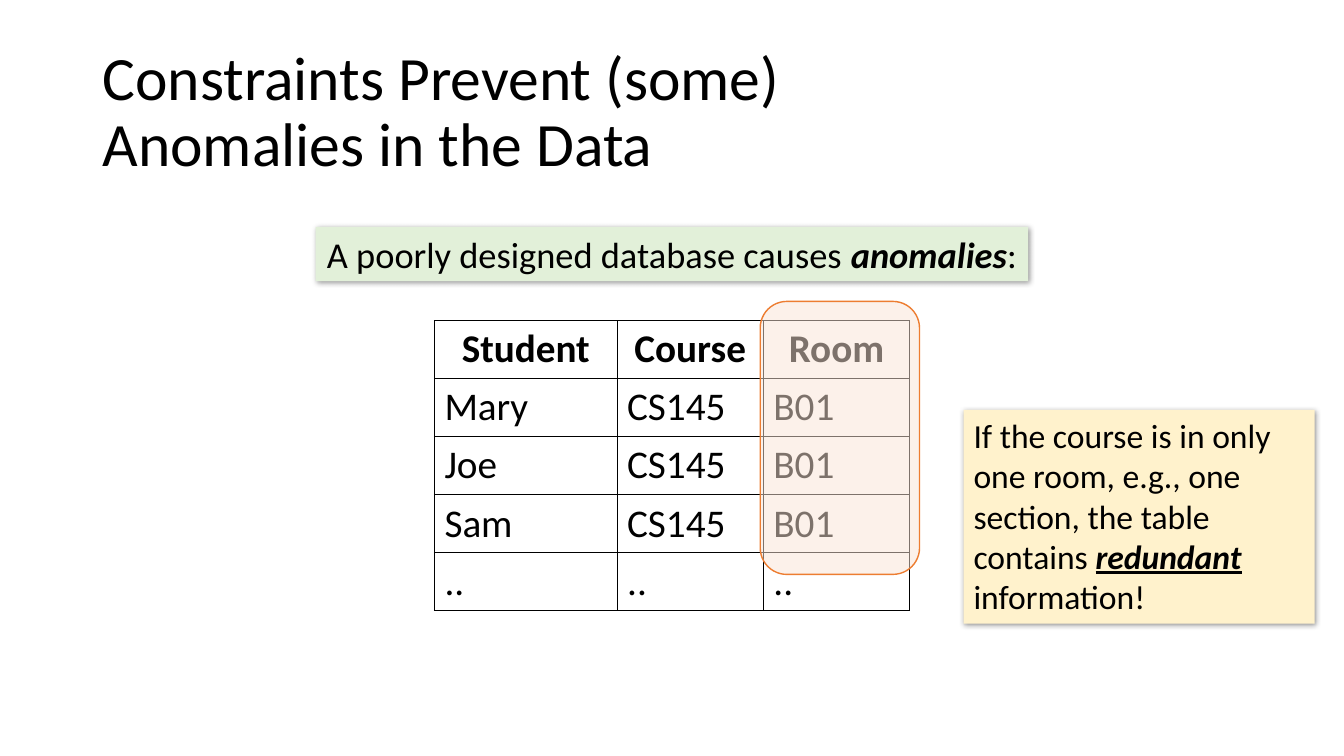
from dataclasses import dataclass

from lxml import etree
from pptx import Presentation
from pptx.dml.color import RGBColor
from pptx.enum.shapes import MSO_SHAPE as SHAPE
from pptx.enum.text import MSO_ANCHOR as ANCHOR, MSO_AUTO_SIZE as AUTO, PP_ALIGN as ALIGN
from pptx.oxml import parse_xml
from pptx.oxml.ns import nsdecls, qn
from pptx.util import Pt


@dataclass(frozen=True)
class Theme:
    font: str = "Calibri"
    ink: str = "000000"
    green: str = "E2F0D9"
    yellow: str = "FFF2CC"
    peach: str = "FBE5D6"
    orange: str = "ED7D31"
    title: int = 44
    table: int = 28
    banner: int = 26
    note: int = 24


THEME = Theme()
ROWS = [
    ("Student", "Course", "Room"),
    ("Mary", "CS145", "B01"),
    ("Joe", "CS145", "B01"),
    ("Sam", "CS145", "B01"),
    ("..", "..", ".."),
]


def rgb(color):
    return RGBColor.from_string(color)


def place(shape, box):
    shape.left, shape.top, shape.width, shape.height = (Pt(v) for v in box)


def style(r, size, bold=False, italic=False, underline=False):
    f = r.font
    f.name, f.size, f.color.rgb = THEME.font, Pt(size), rgb(THEME.ink)
    f.bold, f.italic, f.underline = bold, italic, underline


def add_title(s, box, text):
    title = s.shapes.title
    place(title, box)
    tf = title.text_frame
    tf.text = text
    tf.auto_size, tf.vertical_anchor = AUTO.NONE, ANCHOR.MIDDLE
    p = tf.paragraphs[0]
    p.alignment, p.line_spacing = ALIGN.LEFT, 0.9
    for r in p.runs:
        style(r, THEME.title)


def add_borders(cell):
    tcPr = cell._tc.get_or_add_tcPr()
    for side in ("lnL", "lnR", "lnT", "lnB"):
        tcPr.append(parse_xml(
            f'<a:{side} {nsdecls("a")} w="{Pt(1)}"><a:solidFill>'
            f'<a:srgbClr val="{THEME.ink}"/></a:solidFill></a:{side}>'))


def add_grid(s, box, widths, rows):
    table = s.shapes.add_table(len(rows), len(widths), *(Pt(v) for v in box)).table
    table.first_row = table.horz_banding = False
    for col, width in zip(table.columns, widths):
        col.width = Pt(width)
    for i, values in enumerate(rows):
        table.rows[i].height = Pt(box[3] / len(rows))
        for j, value in enumerate(values):
            cell = table.cell(i, j)
            add_borders(cell)
            cell.fill.background()
            p = cell.text_frame.paragraphs[0]
            p.text = value
            p.alignment = ALIGN.LEFT if i else ALIGN.CENTER
            style(p.runs[0], THEME.table, bold=i == 0)


def add_shadow(shape):
    effects = shape._element.spPr.find(qn("a:effectLst"))
    shadow = etree.SubElement(effects, qn("a:outerShdw"), blurRad=str(Pt(4)),
                              dist=str(Pt(1)), dir="2700000", rotWithShape="0")
    color = etree.SubElement(shadow, qn("a:srgbClr"), val=THEME.ink)
    etree.SubElement(color, qn("a:alpha"), val="40000")


def add_callout(s, box, fill, size, parts, align=ALIGN.LEFT, underline=False):
    """Shadowed panel; the middle one of its text parts is emphasised."""
    sp = s.shapes.add_shape(SHAPE.RECTANGLE, *(Pt(v) for v in box))
    sp.shadow.inherit = False
    add_shadow(sp)
    sp.fill.solid()
    sp.fill.fore_color.rgb = rgb(fill)
    sp.line.fill.background()
    tf = sp.text_frame
    tf.word_wrap, tf.vertical_anchor = True, ANCHOR.TOP
    tf.auto_size = AUTO.SHAPE_TO_FIT_TEXT
    p = tf.paragraphs[0]
    p.alignment = align
    for i, text in enumerate(parts):
        r = p.add_run()
        r.text = text
        strong = i == 1
        style(r, size, strong, strong, strong and underline)


def add_highlight(s, box):
    sp = s.shapes.add_shape(SHAPE.ROUNDED_RECTANGLE, *(Pt(v) for v in box))
    sp.shadow.inherit = False
    sp.fill.solid()
    sp.fill.fore_color.rgb = rgb(THEME.peach)
    color = sp._element.spPr.find(qn("a:solidFill"))[0]
    etree.SubElement(color, qn("a:alpha"), val="50000")
    sp.line.color.rgb = rgb(THEME.orange)
    sp.line.width = Pt(1)


def main():
    prs = Presentation()
    prs.slide_width, prs.slide_height = Pt(960), Pt(540)
    s = prs.slides.add_slide(prs.slide_layouts[5])

    # Heading
    add_title(s, (66, 28.75, 828, 104.4),
              "Constraints Prevent (some) \vAnomalies in the Data")

    # Course table
    add_grid(s, (310.3, 229, 339.5, 207), (130.5, 104.5, 104.5), ROWS)

    # Side note and banner
    add_callout(s, (688.3, 292.7, 250.8, 152.7), THEME.yellow, THEME.note,
                ("If the course is in only one room, e.g., one section, the table contains ",
                 "redundant", " information!"), underline=True)
    add_callout(s, (225.5, 162, 509, 38.8), THEME.green, THEME.banner,
                ("A poorly designed database causes ", "anomalies", ":"), ALIGN.CENTER)

    # Marker over the Room column
    add_highlight(s, (543, 215.3, 113.8, 195))

    prs.save("out.pptx")


if __name__ == "__main__":
    main()
